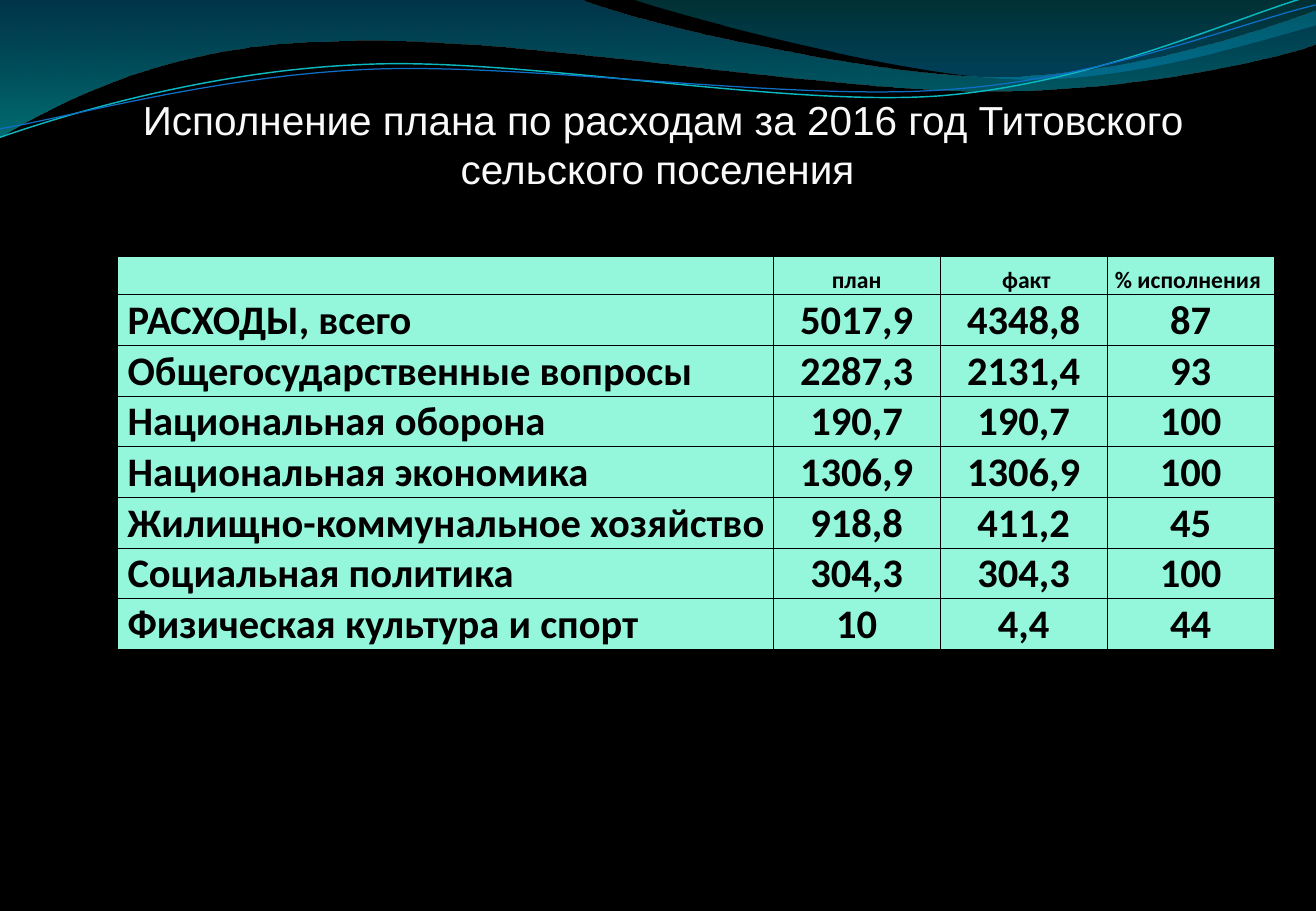
import math

from lxml import etree
from pptx import Presentation
from pptx import util as u
from pptx.dml.color import RGBColor
from pptx.enum import text
from pptx.oxml.ns import qn

Pt = u.Pt
BLACK, MINT, NEAR_WHITE = "000000", "94F7DC", "F9F9F9"
STRAND_TILT, STRAND_CENTER = 2.7, (389.7, 42)

# Paths in points: a pair is a corner, six numbers are a cubic curve
RIBBONS = [
    ([(0, -0.7), (343.4, -0.7),
      (370.8, 12.2, 517.7, 45.4, 591.8, 45.4),
      (665.3, 45.4, 747.4, 18.7, 779.8, 6.5), (781.2, 25.9),
      (766.8, 31.7, 678.2, 54.7, 581.8, 54),
      (485.3, 54, 298.1, 20.2, 200.9, 24.5),
      (100.8, 25.2, 36, 59.8, -0.7, 81.4)],
     [(0, "0074A1", 45), (1, "00C6CF", 55)]),
    ([(373.7, -0.7),
      (397.4, 7.9, 532.1, 44.6, 599.8, 46.8),
      (667.4, 49.7, 750.2, 23, 779.8, 15.1), (779.8, 0)],
     [(0, "00A1A9", 30), (0.8, "008BBF", 45)]),
]
STRANDS = [
    ([(0, 81.4), (37.4, 68.4, 123.1, 41.8, 216, 38.2),
      (308.2, 33.8, 462.2, 63.4, 555.8, 56.9),
      (649.4, 49.7, 732.2, 10.1, 778.3, -2.9)], "0AB8BF", 0.85),
    ([(0, 76.3), (36.7, 70.6, 127.4, 44.6, 221, 41),
      (313.9, 37.4, 465.8, 59.8, 558.7, 53.3),
      (652.3, 47.5, 734.4, 13.7, 779.8, 2.9)], "0F6FC6", 0.75),
]

TITLE = "Исполнение плана по расходам за 2016 год Титовского сельского поселения "
EXPENSES = [
    ("", "план", " факт", "% исполнения "),
    (" РАСХОДЫ, всего", "5017,9", "4348,8", "87"),
    (" Общегосударственные вопросы", "2287,3", "2131,4", "93"),
    (" Национальная оборона", "190,7", "190,7", "100"),
    (" Национальная экономика", "1306,9", "1306,9", "100"),
    (" Жилищно-коммунальное хозяйство", "918,8", "411,2", "45"),
    (" Социальная политика", "304,3", "304,3", "100"),
    (" Физическая культура и спорт", "10", "4,4", "44"),
]


def color(value):
    return RGBColor.from_string(value)


def add_text(paragraph, words, font, size, fill, bold=False):
    run = paragraph.add_run()
    run.text = words
    run.font.name = font
    run.font.size = Pt(size)
    run.font.bold = bold
    run.font.color.rgb = color(fill)


def turn(x, y, degrees):
    """Turn a point clockwise about the middle of the strands."""
    angle, (cx, cy) = math.radians(degrees), STRAND_CENTER
    dx, dy = x - cx, y - cy
    return (cx + dx * math.cos(angle) - dy * math.sin(angle),
            cy + dx * math.sin(angle) + dy * math.cos(angle))


def add_path(slide, left, top, path, close, tilt=0):
    points = [turn(part[i], part[i + 1], tilt)
              for part in path for i in range(0, len(part), 2)]
    points = [(Pt(left + x), Pt(top + y)) for x, y in points]
    builder = slide.shapes.build_freeform(*points[0])
    builder.add_line_segments(points[1:], close=close)
    shape = builder.convert_to_shape()
    shape.shadow.inherit = False
    shape.rotation = -tilt % 360

    # Join each three points of a curve into one cubic segment
    segments = iter(list(shape.element.spPr.iter(qn("a:lnTo"))))
    for part in path[1:]:
        segment = next(segments)
        if len(part) == 6:
            segment.addprevious(curve := etree.Element(qn("a:cubicBezTo")))
            for node in (segment, next(segments), next(segments)):
                curve.append(node[0])
                node.getparent().remove(node)
    return shape


def add_waves(slide, left, top):
    # Translucent ribbons, shaded from top to bottom
    for path, stops in RIBBONS:
        shape = add_path(slide, left, top, path, True)
        shape.line.fill.background()
        shape.fill.gradient()
        shape.fill.gradient_angle = 270
        for stop, (position, value, _) in zip(shape.fill.gradient_stops, stops):
            stop.position = position
            stop.color.rgb = color(value)
        for node, (_, _, opacity) in zip(shape.element.spPr.iter(qn("a:srgbClr")), stops):
            etree.SubElement(node, qn("a:alpha"), val=str(opacity * 1000))
    # Thin tilted strands
    for path, value, width in STRANDS:
        shape = add_path(slide, left, top, path, False, STRAND_TILT)
        shape.fill.background()
        shape.line.color.rgb = color(value)
        shape.line.width = Pt(width)


def add_title(slide, left, top, width, height):
    box = slide.shapes.add_textbox(Pt(left), Pt(top), Pt(width), Pt(height))
    frame = box.text_frame
    frame.word_wrap = True
    frame.vertical_anchor = text.MSO_ANCHOR.MIDDLE
    paragraph = frame.paragraphs[0]
    paragraph.alignment = text.PP_ALIGN.CENTER
    add_text(paragraph, TITLE, "Arial", 24, NEAR_WHITE)


def add_borders(cell, value, width):
    properties = cell._tc.get_or_add_tcPr()
    for side in ("lnL", "lnR", "lnT", "lnB"):
        line = etree.SubElement(properties, qn("a:" + side), w=str(Pt(width)))
        fill = etree.SubElement(line, qn("a:solidFill"))
        etree.SubElement(fill, qn("a:srgbClr"), val=value)


def add_expenses(slide, left, top, width, height):
    header_height, number_width = 22.5, 99
    row_height = (height - header_height) / (len(EXPENSES) - 1)
    table = slide.shapes.add_table(len(EXPENSES), len(EXPENSES[0]), Pt(left), Pt(top),
                                   Pt(width), Pt(height)).table
    table.first_row = table.horz_banding = False
    for index, column in enumerate(table.columns):
        column.width = Pt(number_width if index else width - 3 * number_width)

    for i, values in enumerate(EXPENSES):
        table.rows[i].height = Pt(row_height if i else header_height)
        for j, value in enumerate(values):
            cell = table.cell(i, j)
            add_borders(cell, BLACK, 0.5)
            cell.fill.solid()
            cell.fill.fore_color.rgb = color(MINT)
            cell.vertical_anchor = text.MSO_ANCHOR.BOTTOM
            cell.margin_left = cell.margin_right = cell.margin_top = Pt(0.7)
            cell.margin_bottom = 0
            if value:
                paragraph = cell.text_frame.paragraphs[0]
                paragraph.alignment = text.PP_ALIGN.CENTER if j else text.PP_ALIGN.LEFT
                add_text(paragraph, value, "Calibri", 24 if i else 14, BLACK, True)


def main():
    presentation = Presentation()
    presentation.slide_width, presentation.slide_height = Pt(780), Pt(540)
    slide = presentation.slides.add_slide(presentation.slide_layouts[6])
    slide.background.fill.solid()
    slide.background.fill.fore_color.rgb = color(BLACK)

    add_waves(slide, 0, 0)
    add_expenses(slide, 69.5, 152, 685.8, 233)
    add_title(slide, 72.7, 52.6, 640.8, 65.5)
    presentation.save("out.pptx")


if __name__ == "__main__":
    main()
